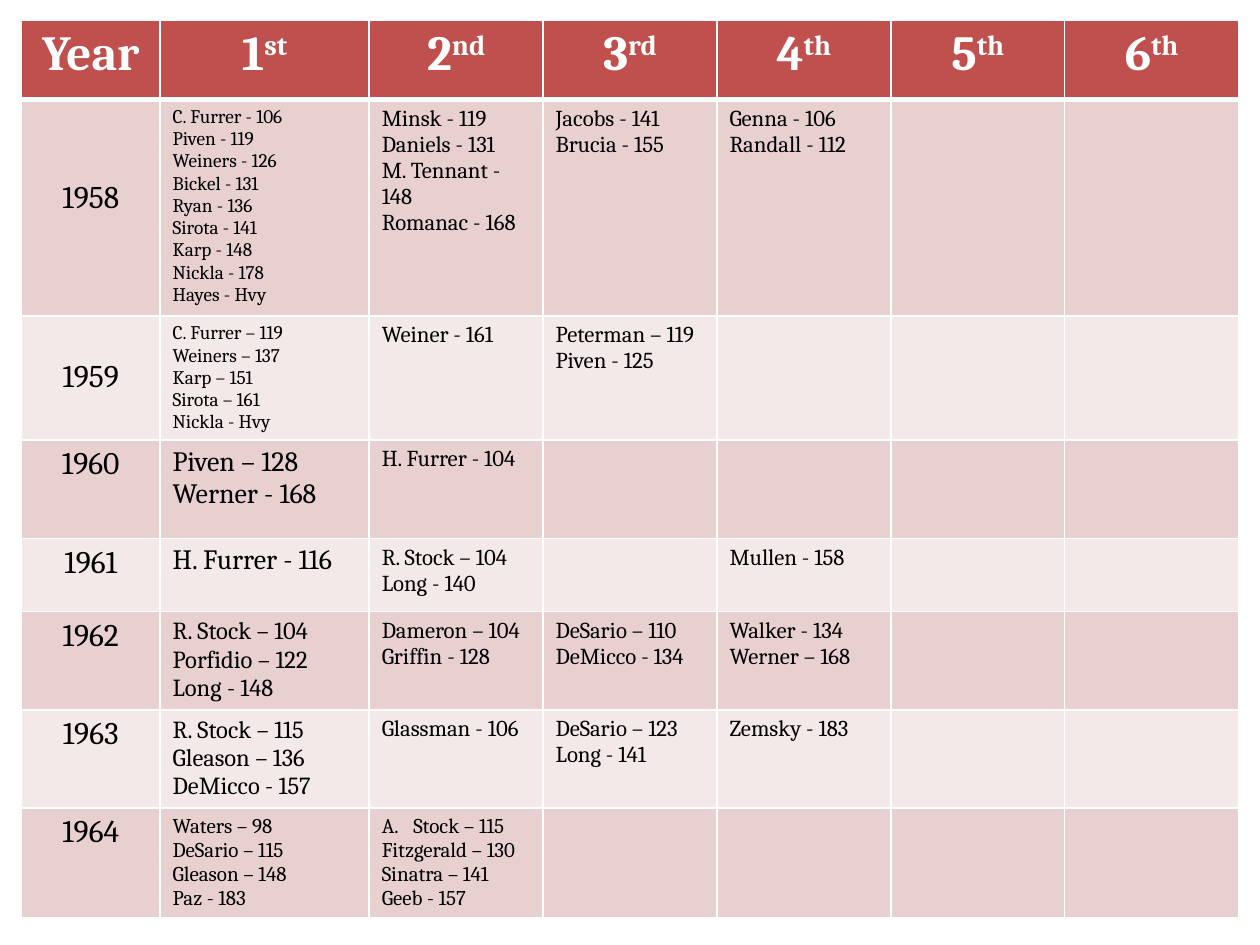
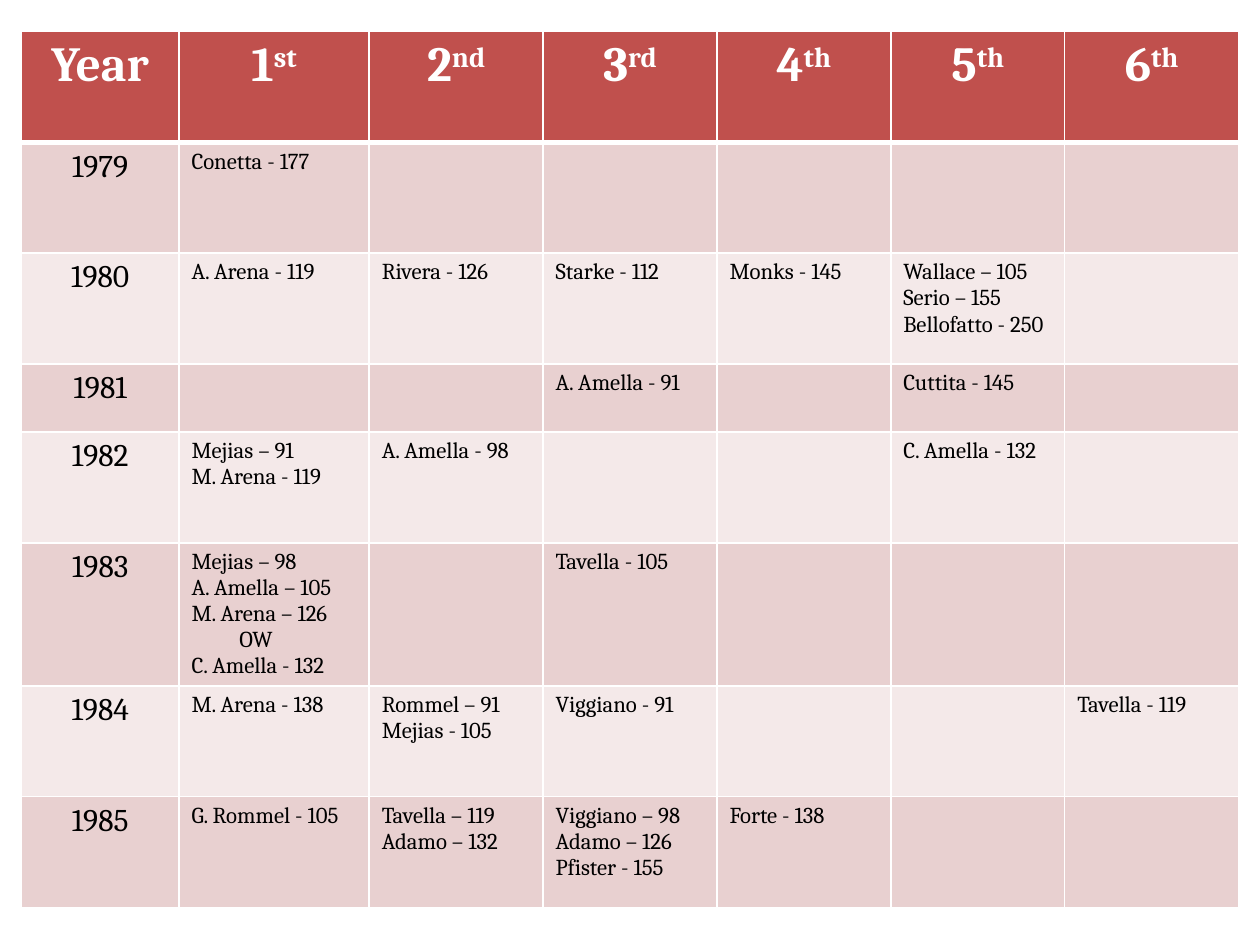
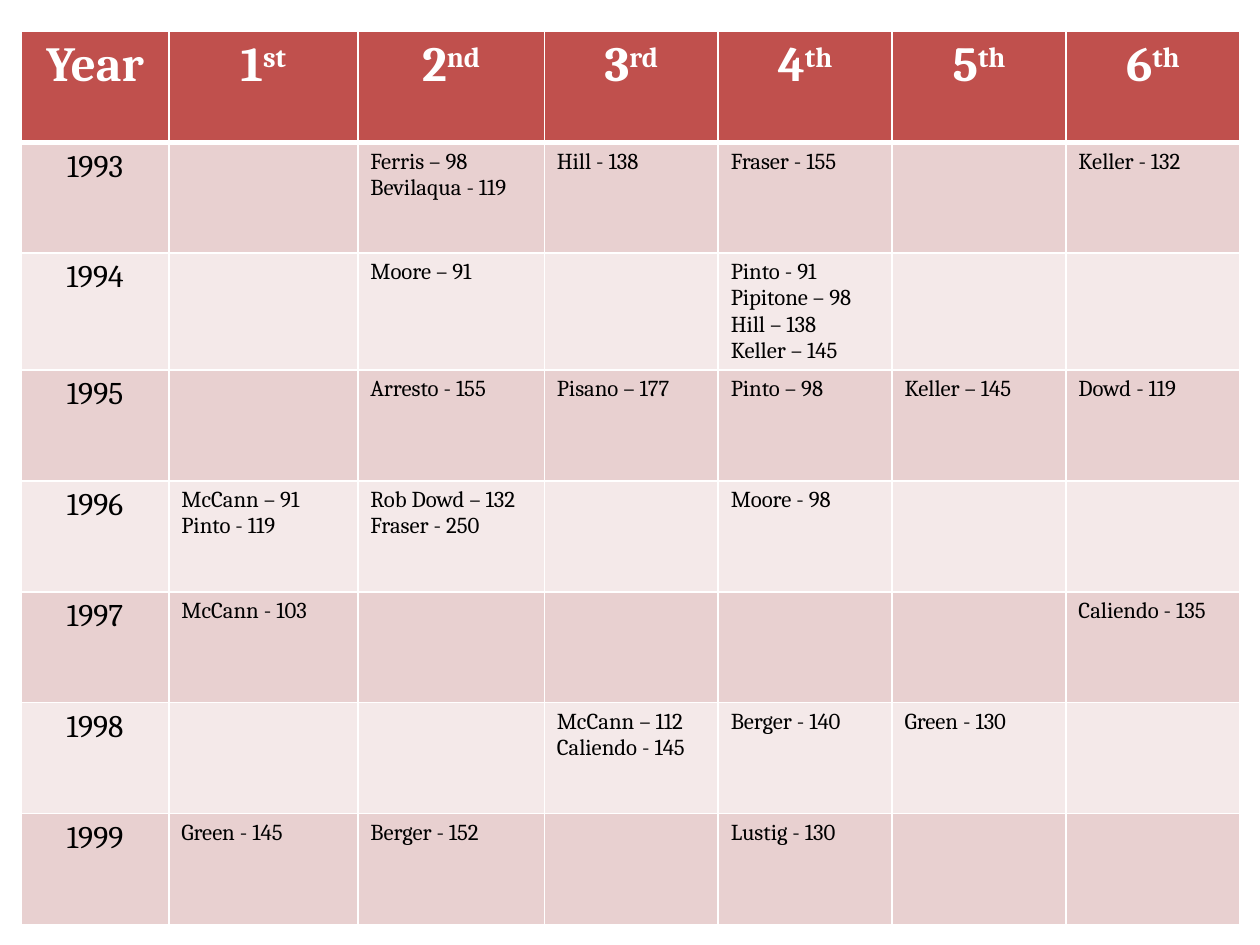
from lxml import etree
from pptx import Presentation
from pptx.dml.color import RGBColor
from pptx.enum.text import PP_ALIGN
from pptx.oxml.ns import qn
from pptx.util import Inches, Pt

CENTER = PP_ALIGN.CENTER
RED = RGBColor(0xC0, 0x50, 0x4D)
ROSE = RGBColor(0xE8, 0xD0, 0xD0)
PALE = RGBColor(0xF4, 0xE9, 0xE9)
WHITE = RGBColor(0xFF, 0xFF, 0xFF)
BLACK = RGBColor(0, 0, 0)
FONT = "Cambria"
LEFT = 0.17
PLACE = 1.38

HEADS = [("Year", ""), ("1", "st"), ("2", "nd"), ("3", "rd"),
         ("4", "th"), ("5", "th"), ("6", "th")]

SLIDES = [
    {
        "top": 0.16,
        "cols": [1.1, 1.66] + [PLACE] * 5,
        "rows": [0.63, 1.72, 0.78, 0.78, 0.58, 0.78, 0.78, 0.78],
        "years": [
            ("1958", "C. Furrer - 106\nPiven - 119\nWeiners - 126\nBickel - 131\n"
             "Ryan - 136\nSirota - 141\nKarp - 148\nNickla - 178\nHayes - Hvy",
             "Minsk - 119\nDaniels - 131\nM. Tennant - 148\nRomanac - 168",
             "Jacobs - 141\nBrucia - 155", "Genna - 106\nRandall - 112", "", ""),
            ("1959", "C. Furrer – 119\nWeiners – 137\nKarp – 151\nSirota – 161\nNickla - Hvy",
             "Weiner - 161", "Peterman – 119\nPiven - 125", "", "", ""),
            ("1960", "Piven – 128\nWerner - 168", "H. Furrer - 104", "", "", "", ""),
            ("1961", "H. Furrer - 116", "R. Stock – 104\nLong - 140", "",
             "Mullen - 158", "", ""),
            ("1962", "R. Stock – 104\nPorfidio – 122\nLong - 148",
             "Dameron – 104\nGriffin - 128", "DeSario – 110\nDeMicco - 134",
             "Walker - 134 Werner – 168", "", ""),
            ("1963", "R. Stock – 115\nGleason – 136\nDeMicco - 157", "Glassman - 106",
             "DeSario – 123\nLong - 141", "Zemsky - 183", "", ""),
            ("1964", "Waters – 98\nDeSario – 115\nGleason – 148\nPaz - 183",
             "Stock – 115\nFitzgerald – 130\nSinatra – 141\nGeeb - 157", "", "", "", ""),
        ],
    },
    {
        "top": 0.25,
        "cols": [1.25, 1.51] + [PLACE] * 5,
        "rows": [0.88] * 3 + [0.54] + [0.88] * 4,
        "years": [
            ("1979", "Conetta - 177", "", "", "", "", ""),
            ("1980", "A. Arena - 119", "Rivera - 126", "Starke - 112", "Monks - 145",
             "Wallace – 105\nSerio – 155\nBellofatto - 250", ""),
            ("1981", "", "", "A. Amella - 91", "", "Cuttita - 145", ""),
            ("1982", "Mejias – 91\nM. Arena - 119", "A. Amella - 98", "", "",
             "C. Amella - 132", ""),
            ("1983", "Mejias – 98\nA. Amella – 105\nM. Arena – 126 OW\nC. Amella - 132",
             "", "Tavella - 105", "", "", ""),
            ("1984", "M. Arena - 138", "Rommel – 91\nMejias - 105", "Viggiano - 91",
             "", "", "Tavella - 119"),
            ("1985", "G. Rommel - 105", "Tavella – 119\nAdamo – 132",
             "Viggiano – 98\nAdamo – 126\nPfister - 155", "Forte - 138", "", ""),
        ],
    },
    {
        "top": 0.25,
        "cols": [1.17, 1.5, 1.48] + [PLACE] * 4,
        "rows": [0.88] * 8,
        "years": [
            ("1993", "", "Ferris – 98\nBevilaqua - 119", "Hill - 138", "Fraser - 155",
             "", "Keller - 132"),
            ("1994", "", "Moore – 91", "",
             "Pinto - 91\nPipitone – 98\nHill – 138\nKeller – 145", "", ""),
            ("1995", "", "Arresto - 155", "Pisano – 177", "Pinto – 98",
             "Keller – 145", "Dowd - 119"),
            ("1996", "McCann – 91\nPinto - 119", "Rob Dowd – 132\nFraser - 250", "",
             "Moore - 98", "", ""),
            ("1997", "McCann - 103", "", "", "", "", "Caliendo - 135"),
            ("1998", "", "", "McCann – 112\nCaliendo - 145", "Berger - 140",
             "Green - 130", ""),
            ("1999", "Green - 145", "Berger - 152", "", "Lustig - 130", "", ""),
        ],
    },
]

SIZES = {("1958", 1): 11, ("1959", 1): 11, ("1960", 1): 16, ("1961", 1): 16,
         ("1962", 1): 14, ("1963", 1): 14, ("1964", 1): 12, ("1964", 2): 12}
DROPS = {"1958": 0.64, "1959": 0.34}
HANGS = {("1964", 2): (0.25, 0), ("1983", 1): (0.38, 1)}
LETTERED = ("1964", 2)


def edge(cell, row):
    props = cell._tc.get_or_add_tcPr()
    thick = {"lnB": row == 0, "lnT": row == 1}
    for side in ("lnL", "lnR", "lnT", "lnB"):
        width = Pt(3 if thick.get(side) else 1)
        line = etree.SubElement(props, qn("a:" + side), w=str(width))
        fill = etree.SubElement(line, qn("a:solidFill"))
        etree.SubElement(fill, qn("a:srgbClr"), val=str(WHITE))


def style(font, size, color, bold=False):
    font.name = FONT
    font.size = Pt(size)
    font.bold = bold
    font.color.rgb = color


def paint(cell, row, color):
    edge(cell, row)
    cell.fill.solid()
    cell.fill.fore_color.rgb = color


def fill_head(cell, name, suffix):
    paint(cell, 0, RED)
    para = cell.text_frame.paragraphs[0]
    para.text = name
    para.alignment = CENTER
    if suffix:
        run = para.add_run()
        run.text = suffix
        run._r.get_or_add_rPr().set("baseline", "30000")
    for run in para.runs:
        style(run.font, 28, WHITE, True)


def hang(paras, key):
    indent, start = HANGS[key]
    for para in paras[start:]:
        props = para._p.get_or_add_pPr()
        props.set("marL", str(Inches(indent)))
        props.set("indent", str(-Inches(indent)))
    if key == LETTERED:
        props = paras[0]._p.get_or_add_pPr()
        etree.SubElement(props, qn("a:buFont"), typeface="+mj-lt")
        etree.SubElement(props, qn("a:buAutoNum"), type="alphaUcPeriod")


def fill_cell(cell, row, col, year, text):
    paint(cell, row, ROSE if row % 2 else PALE)
    cell.text_frame.text = text
    paras = cell.text_frame.paragraphs
    size = 18 if col == 0 else SIZES.get((year, col), 13)
    for para in paras:
        if col == 0:
            para.alignment = CENTER
        for run in para.runs:
            style(run.font, size, BLACK)
    if col == 0 and year in DROPS:
        cell.margin_top = Inches(DROPS[year])
    if (year, col) in HANGS:
        hang(paras, (year, col))


def add_slide(deck, data):
    slide = deck.slides.add_slide(deck.slide_layouts[6])
    cols, rows = data["cols"], data["rows"]
    table = slide.shapes.add_table(
        len(rows), len(cols), Inches(LEFT), Inches(data["top"]),
        Inches(sum(cols)), Inches(sum(rows))).table
    for col, width in zip(table.columns, cols):
        col.width = Inches(width)
    for row, height in zip(table.rows, rows):
        row.height = Inches(height)
    for col, (name, suffix) in enumerate(HEADS):
        fill_head(table.cell(0, col), name, suffix)
    for row, entry in enumerate(data["years"], 1):
        for col, text in enumerate(entry):
            fill_cell(table.cell(row, col), row, col, entry[0], text)


def main():
    deck = Presentation()
    deck.slide_width = Inches(10)
    deck.slide_height = Inches(7.5)
    for data in SLIDES:
        add_slide(deck, data)
    deck.save("out.pptx")


if __name__ == "__main__":
    main()
